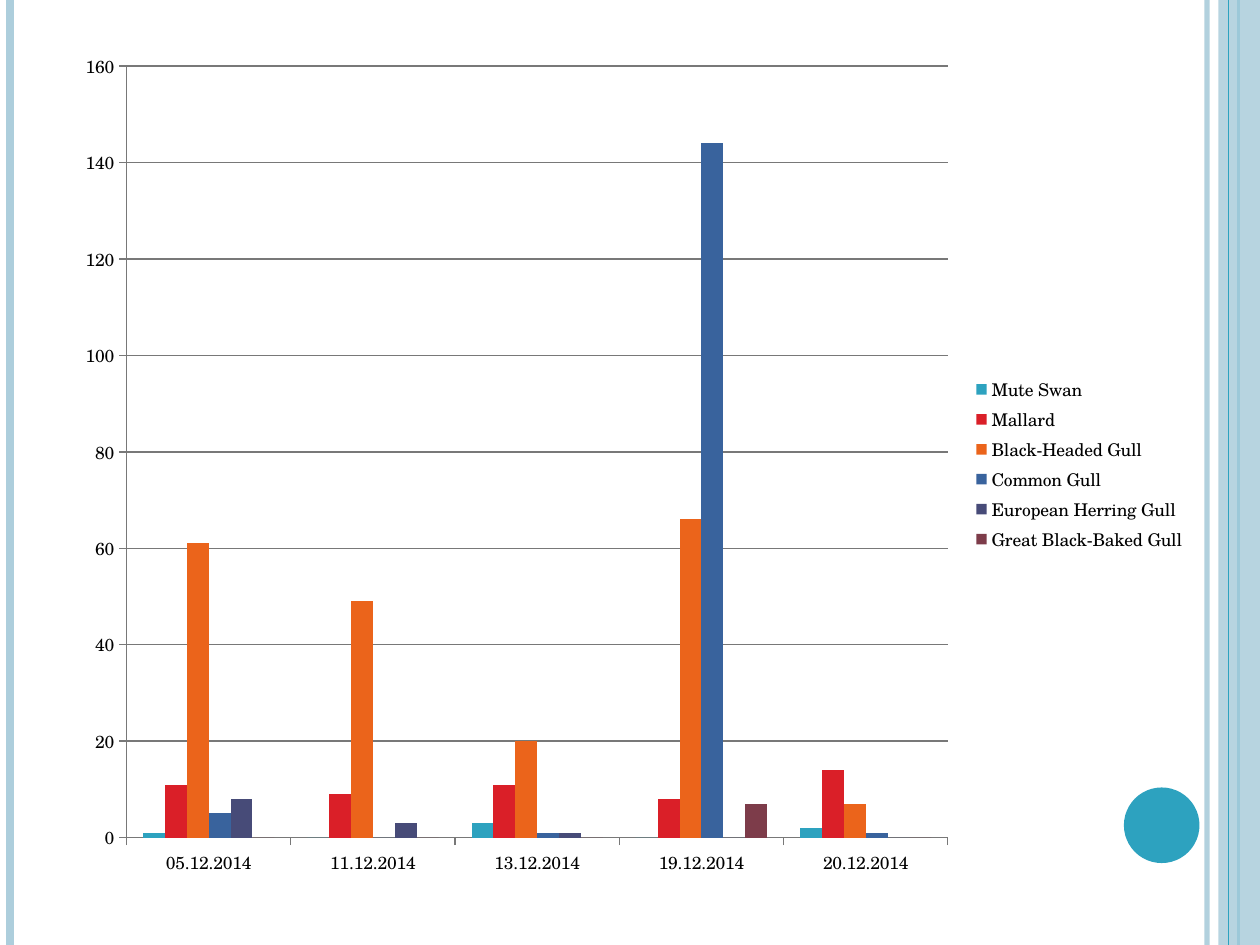
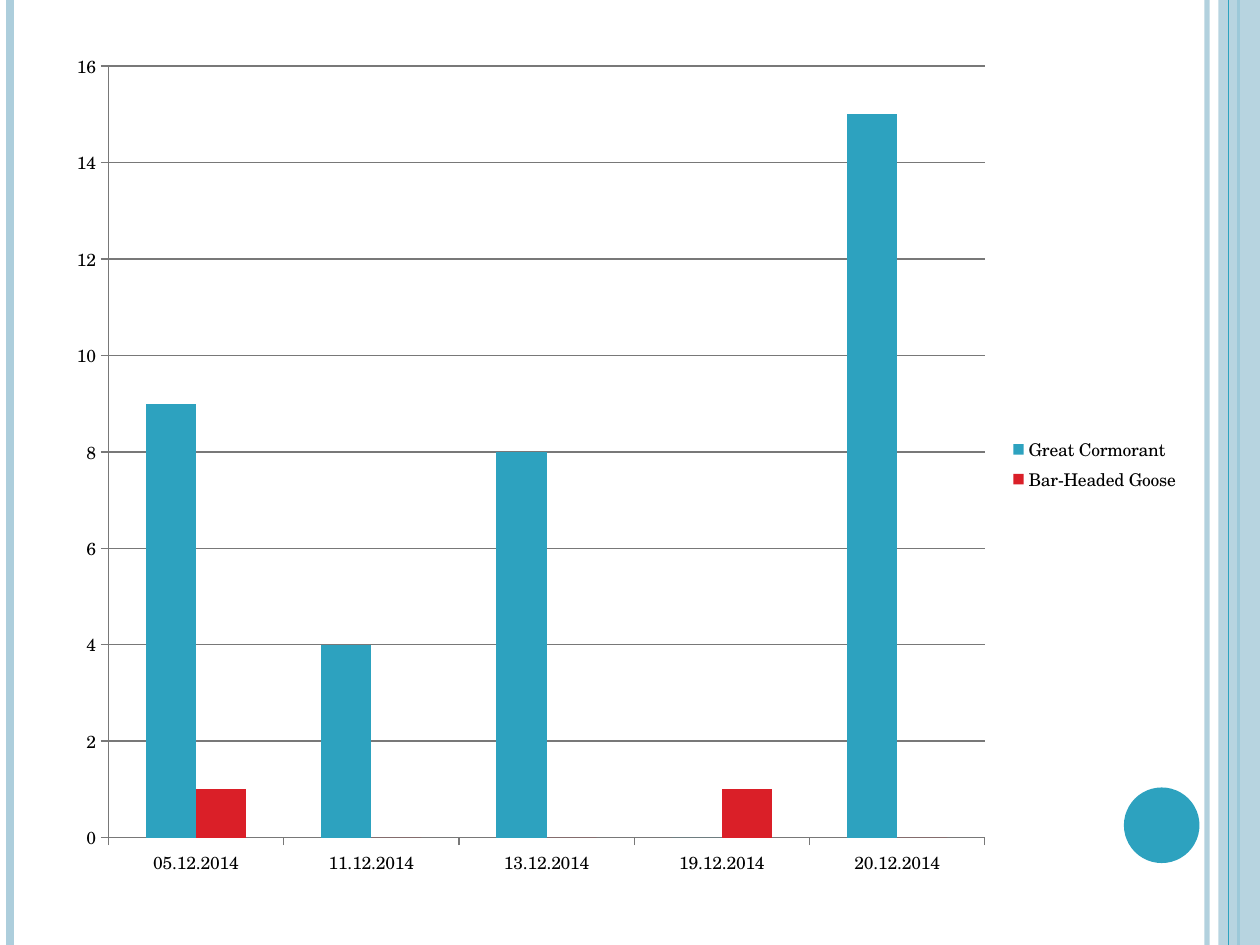
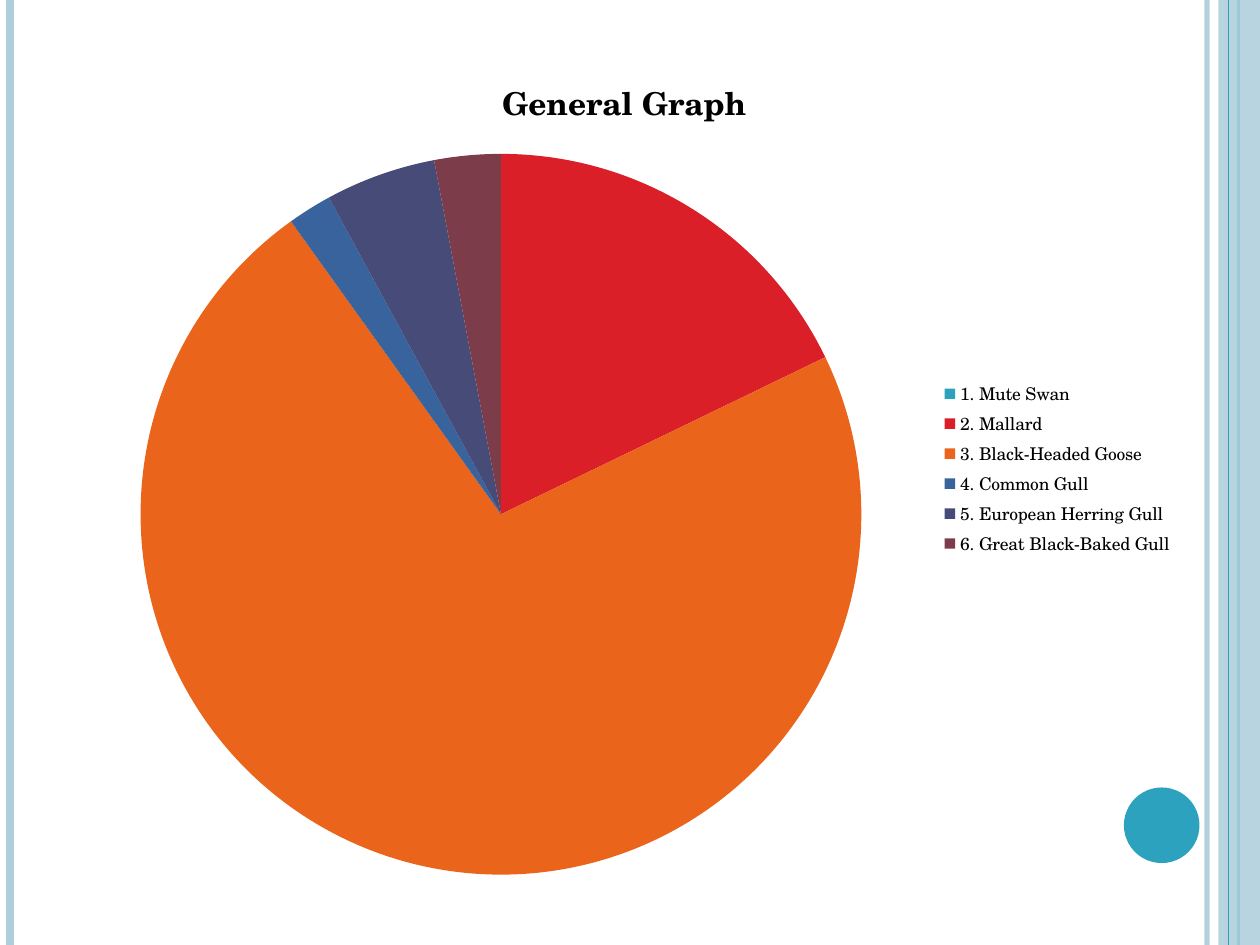
"""Build three slides of bird count charts in one shared frame."""
from pptx import Presentation
from pptx.chart.data import CategoryChartData as Data
from pptx.dml.color import RGBColor as RGB
from pptx.enum.chart import XL_CHART_TYPE as Kind, XL_LEGEND_POSITION as Side, XL_TICK_MARK as Tick
from pptx.enum.shapes import MSO_CONNECTOR as Link, MSO_SHAPE as Form
from pptx.oxml.ns import qn
from pptx.util import Inches, Pt

INK = {"teal": "2DA2BF", "red": "DA1F28", "orange": "EB641B", "blue": "39639D",
       "navy": "474B78", "wine": "7D3C4A", "pale": "ADCEDC", "grid": "787878",
       "text": "000000", "paper": "FFFFFF"}
HUES = ["teal", "red", "orange", "blue", "navy", "wine"]
FONT = {"name": "TeX Gyre Schola", "size": Pt(10), "bold": False}
HEAD = {**FONT, "size": Pt(18), "bold": True}
DATES = ["05.12.2014", "11.12.2014", "13.12.2014", "19.12.2014", "20.12.2014"]
COMMON = {
    "Mute Swan": [1, 0, 3, 0, 2],
    "Mallard": [11, 9, 11, 8, 14],
    "Black-Headed Gull": [61, 49, 20, 66, 7],
    "Common Gull": [5, 0, 1, 144, 1],
    "European Herring Gull": [8, 3, 1, 0, 0],
    "Great Black-Baked Gull": [0, 0, 0, 7, 0],
}
RARE = {"Great Cormorant": [9, 4, 8, 0, 15], "Bar-Headed Goose": [1, 0, 0, 1, 0]}
SHARE = {"1. Mute Swan": 0, "2. Mallard": 18, "3. Black-Headed Goose": 73,
         "4. Common Gull": 2, "5. European Herring Gull": 5, "6. Great Black-Baked Gull": 3}


class Deck:
    def __init__(self):
        self.prs = Presentation()
        self.prs.slide_width, self.prs.slide_height = Inches(10), Inches(7.5)
        self.slide = None

    def page(self):
        self.slide = self.prs.slides.add_slide(self.prs.slide_layouts[6])
        self.paint(self.slide.background.fill, "paper")
        self.rule(9.58, "pale", 3, 93)
        self.rule(0.08, "pale", 4.5)
        self.rule(9.83, "teal", 1.5)
        self.shape(Form.RECTANGLE, (9.67, 0, 0.33, 7.5), "pale", 87)
        self.rule(9.75, "teal", 0.75)
        self.shape(Form.OVAL, (8.92, 6.25, 0.6, 0.6), "teal")

    def paint(self, fill, hue, alpha=100):
        fill.solid()
        fill.fore_color.rgb = RGB.from_string(INK[hue])
        if alpha < 100:
            tint = fill._xPr.find(".//" + qn("a:srgbClr"))
            tint.append(tint.makeelement(qn("a:alpha"), {"val": str(alpha * 1000)}))

    def style(self, font, form):
        for key, val in form.items():
            setattr(font, key, val)
        font.color.rgb = RGB.from_string(INK["text"])

    def rule(self, x, hue, width, alpha=100):
        line = self.slide.shapes.add_connector(
            Link.STRAIGHT, Inches(x), 0, Inches(x), self.prs.slide_height)
        line.line.width = Pt(width)
        self.paint(line.line.fill, hue, alpha)
        props = line._element.spPr
        props.append(props.makeelement(qn("a:effectLst"), {}))

    def shape(self, form, box, hue, alpha=100):
        item = self.slide.shapes.add_shape(form, *map(Inches, box))
        self.paint(item.fill, hue, alpha)
        item.line.fill.background()
        item.shadow.inherit = False

    def chart(self, kind, box, cats, rows):
        data = Data()
        data.categories = cats
        for name, vals in rows.items():
            data.add_series(name, vals)
        chart = self.slide.shapes.add_chart(kind, *map(Inches, box), data).chart
        self.style(chart.font, FONT)
        chart.has_title = False
        chart.has_legend = True
        chart.legend.position = Side.RIGHT
        chart.legend.include_in_layout = False
        return chart

    def bars(self, box, rows, top):
        chart = self.chart(Kind.COLUMN_CLUSTERED, box, DATES, rows)
        plot = chart.plots[0]
        plot.gap_width, plot.overlap, plot.vary_by_categories = 150, 0, False
        for hue, row in zip(HUES, plot.series):
            self.paint(row.format.fill, hue)
        axis = chart.value_axis
        axis.minimum_scale, axis.maximum_scale, axis.major_unit = 0, top, top / 8
        axis.has_major_gridlines = True
        for side in (chart.category_axis, axis):
            side.major_tick_mark = Tick.OUTSIDE
        for part in (chart.category_axis, axis, axis.major_gridlines):
            part.format.line.width = Pt(0.75)
            self.paint(part.format.line.fill, "grid")

    def pie(self, box, title, parts):
        chart = self.chart(Kind.PIE, box, list(parts), {title: list(parts.values())})
        chart.has_title = True
        frame = chart.chart_title.text_frame
        frame.text = title
        self.style(frame.paragraphs[0].runs[0].font, HEAD)
        plot = chart.plots[0]
        plot.vary_by_categories = True
        for spot, hue in enumerate(HUES):
            self.paint(plot.series[0].points[spot].format.fill, hue)


def main():
    deck = Deck()
    deck.page()
    deck.bars((0.5, 0.29, 9.01, 6.79), COMMON, 160)
    deck.page()
    deck.bars((0.43, 0.29, 9.03, 6.79), RARE, 16)
    deck.page()
    deck.pie((0.5, 0.36, 8.91, 6.72), "General Graph", SHARE)
    deck.prs.save("out.pptx")


if __name__ == "__main__":
    main()
